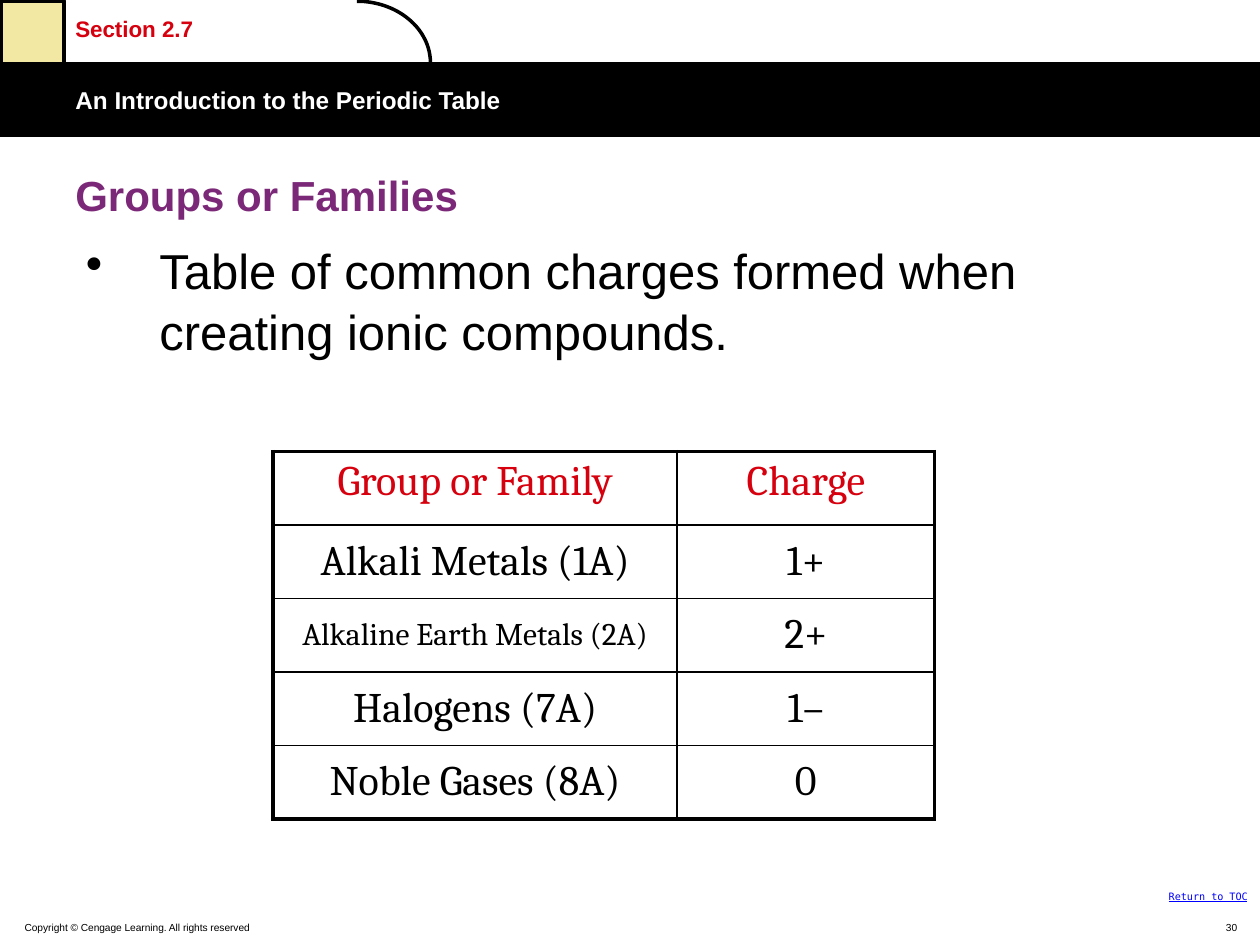
from math import cos, pi, sin

from lxml.etree import SubElement
from pptx import Presentation
from pptx.dml.color import RGBColor
from pptx.enum.shapes import MSO_SHAPE as Shape
from pptx.enum.text import MSO_ANCHOR as Anchor, PP_ALIGN as Align
from pptx.oxml import parse_xml
from pptx.oxml.ns import nsdecls, qn
from pptx.util import Pt

BLACK = RGBColor(0x00, 0x00, 0x00)
WHITE = RGBColor(0xFF, 0xFF, 0xFF)
RED = RGBColor(0xD6, 0x00, 0x0E)
PURPLE = RGBColor(0x7C, 0x28, 0x78)
CREAM = RGBColor(0xF3, 0xE8, 0xA3)
BLUE = RGBColor(0x00, 0x00, 0xFF)

# Content: text, box (left, top, width, height), font format, paragraph options
TEXTS = [
    ("Section 2.7", (36, 2.2, 205, 34),
     {"size": Pt(22), "bold": True, "color": RED}, {"raised": True}),
    ("An Introduction to the Periodic Table", (36, 42, 684, 36),
     {"size": Pt(24), "bold": True, "color": WHITE}, {"raised": True}),
    ("Return to TOC", (642, 504, 78, 16),
     {"size": Pt(10), "name": "DejaVu Sans Mono", "underline": True, "color": BLUE},
     {"raised": True, "align": Align.RIGHT}),
    ("Copyright © Cengage Learning. All rights reserved", (7, 521.5, 462, 18),
     {"size": Pt(10)}, {"raised": True}),
    ("30", (522, 522, 192, 18),
     {"size": Pt(10)}, {"raised": True, "align": Align.RIGHT}),
    ("Table of common charges formed when creating ionic compounds.",
     (42, 132, 648, 74), {"size": Pt(28)}, {"bullet": "•", "spacing": 1.05}),
    ("Groups or Families", (36, 90, 648, 42),
     {"size": Pt(24), "bold": True, "color": PURPLE}, {"anchor": Anchor.MIDDLE}),
]
CHARGES = [
    ("Group or Family", "Charge"),
    ("Alkali Metals (1A)", "1+"),
    ("Alkaline Earth Metals (2A)", "2+"),
    ("Halogens (7A)", "1–"),
    ("Noble Gases (8A)", "0"),
]
SMALL_LABEL = "Alkaline Earth Metals (2A)"
TABLE_LEFT, TABLE_TOP = 156, 258
COLUMN_WIDTHS = (231, 147)
ROW_HEIGHT = 42
OUTER, INNER = 2.25, 1
INDENT = 42


def points(values):
    return [Pt(value) for value in values]


def set_font(font, settings):
    for key, value in {"name": "Arial", "color": BLACK, **settings}.items():
        if key == "color":
            font.color.rgb = value
        else:
            setattr(font, key, value)


def add_box(slide, box, fill, line_width):
    shape = slide.shapes.add_shape(Shape.RECTANGLE, *points(box))
    shape.shadow.inherit = False
    shape.fill.solid()
    shape.fill.fore_color.rgb = fill
    shape.line.color.rgb = BLACK
    shape.line.width = Pt(line_width)


def add_arc(slide, left, top, width, height, steps=32):
    angles = [pi / 2 * step / steps for step in range(steps + 1)]
    curve = [(Pt(left + width * sin(a)), Pt(top + height * (1 - cos(a)))) for a in angles]
    builder = slide.shapes.build_freeform(*curve[0])
    builder.add_line_segments(curve[1:], close=False)
    shape = builder.convert_to_shape()
    shape.shadow.inherit = False
    shape.fill.background()
    shape.line.color.rgb = BLACK
    shape.line.width = Pt(2)


def add_text(slide, text, box, font, options):
    frame = slide.shapes.add_textbox(*points(box)).text_frame
    frame.word_wrap = True
    frame.vertical_anchor = options.get("anchor", Anchor.TOP)
    paragraph = frame.paragraphs[0]
    paragraph.alignment = options.get("align", Align.LEFT)
    if "spacing" in options:
        paragraph.line_spacing = options["spacing"]
    if "bullet" in options:
        properties = paragraph._p.get_or_add_pPr()
        properties.set("marL", str(Pt(INDENT)))
        properties.set("indent", str(-Pt(INDENT)))
        SubElement(properties, qn("a:buChar")).set("char", options["bullet"])
    run = paragraph.add_run()
    run.text = text
    set_font(run.font, font)
    if options.get("raised"):
        run._r.get_or_add_rPr().set("baseline", "30000")


def set_borders(cell, widths):
    properties = cell._tc.get_or_add_tcPr()
    for index, (side, width) in enumerate(widths.items()):
        properties.insert(index, parse_xml(
            f'<a:ln{side} {nsdecls("a")} w="{Pt(width)}"><a:solidFill>'
            f'<a:srgbClr val="{BLACK}"/></a:solidFill></a:ln{side}>'))


def add_table(slide):
    rows, columns = len(CHARGES), len(COLUMN_WIDTHS)
    table = slide.shapes.add_table(rows, columns, *points(
        (TABLE_LEFT, TABLE_TOP, sum(COLUMN_WIDTHS), rows * ROW_HEIGHT))).table
    table.first_row = table.horz_banding = False
    for column, width in zip(table.columns, COLUMN_WIDTHS):
        column.width = Pt(width)
    for r, labels in enumerate(CHARGES):
        table.rows[r].height = Pt(ROW_HEIGHT)
        for c, label in enumerate(labels):
            cell = table.cell(r, c)
            cell.fill.background()
            cell.vertical_anchor = Anchor.MIDDLE if r else Anchor.TOP
            paragraph = cell.text_frame.paragraphs[0]
            paragraph.alignment = Align.CENTER
            run = paragraph.add_run()
            run.text = label
            set_font(run.font, {"name": "Cambria", "color": BLACK if r else RED,
                                "size": Pt(18 if label == SMALL_LABEL else 24)})
            edges = {"L": c == 0, "R": c == columns - 1, "T": r == 0, "B": r == rows - 1}
            set_borders(cell, {side: OUTER if edge else INNER
                               for side, edge in edges.items()})


def main():
    presentation = Presentation()
    presentation.slide_width, presentation.slide_height = Pt(720), Pt(540)
    slide = presentation.slides.add_slide(presentation.slide_layouts[6])

    # Header band, tab curve and corner square
    add_box(slide, (0, 36, 720, 42), BLACK, 0.75)
    add_arc(slide, 204, 0.75, 42, 35.25)
    add_box(slide, (0.75, 0.75, 36, 36), CREAM, 2)

    # Header, body and footer texts
    for entry in TEXTS:
        add_text(slide, *entry)

    # Table of charges
    add_table(slide)
    presentation.save("out.pptx")


if __name__ == "__main__":
    main()
